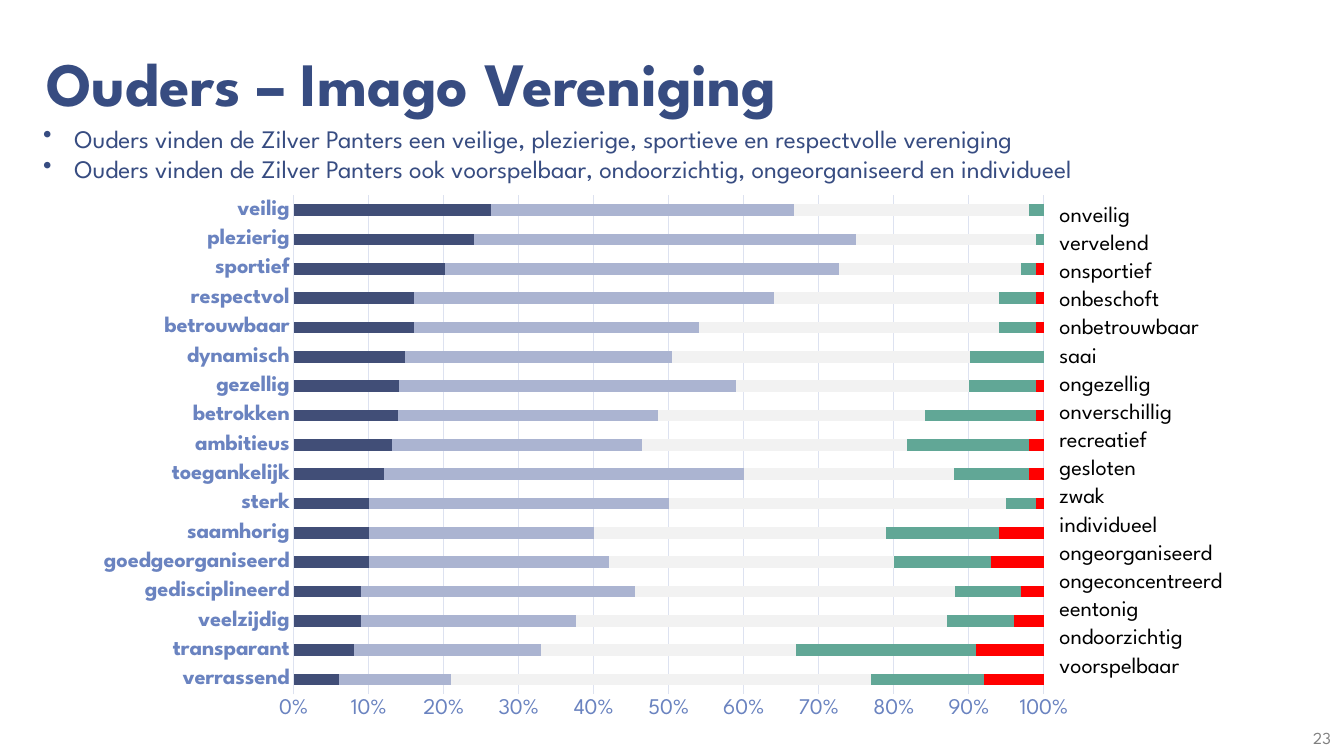
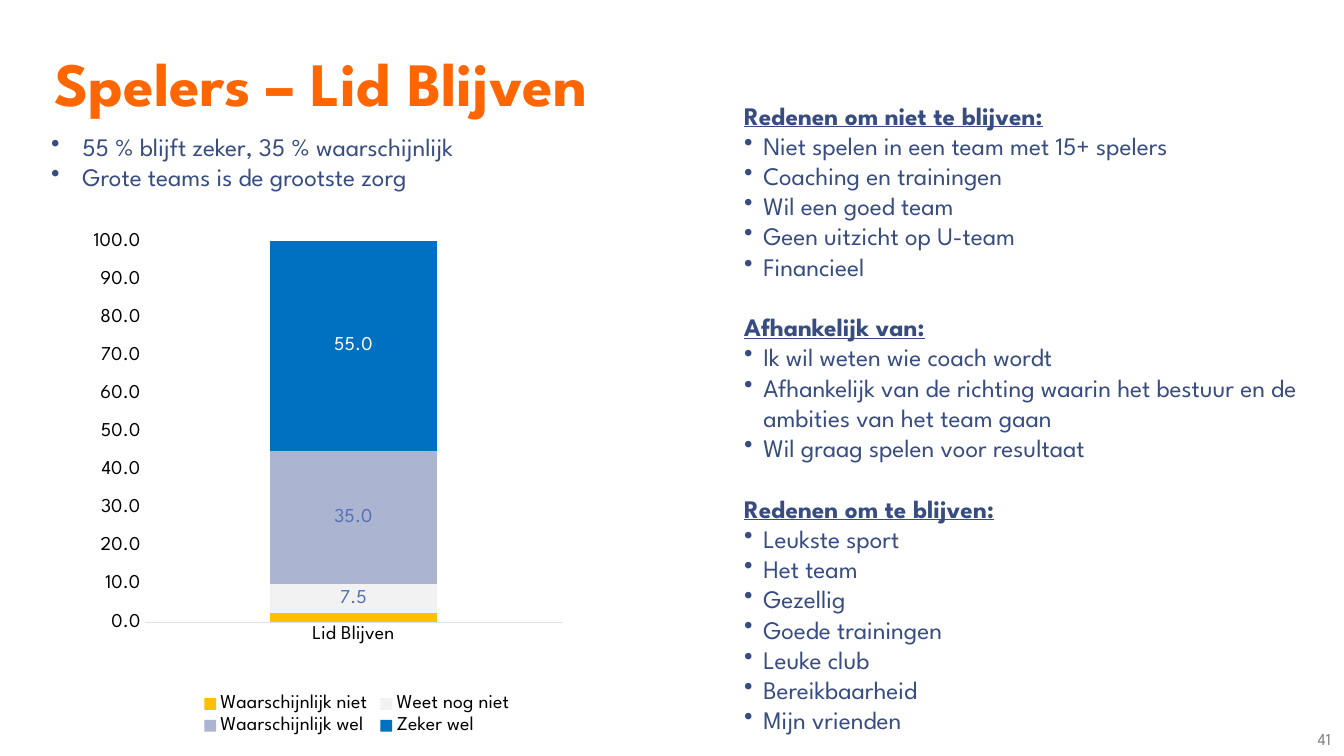
from pptx import Presentation
from pptx.chart.data import CategoryChartData as Data
from pptx.dml.color import RGBColor as RGB
from pptx.enum.chart import XL_CHART_TYPE as Kind, XL_LEGEND_POSITION as Spot, XL_TICK_MARK as Tick
from pptx.enum.text import MSO_ANCHOR as Anchor, PP_ALIGN as Align
from pptx.oxml import parse_xml
from pptx.oxml.ns import nsdecls, qn
from pptx.util import Inches, Pt
from lxml import etree

FACE = "League Spartan"
HUE = {
    "navy": "374C81", "orange": "FF6600", "grey": "808080", "black": "000000",
    "axis": "6A83C0", "grid": "DDE2F0", "label": "546FB6", "white": "FFFFFF",
    "dark": "414E77", "soft": "ABB4D1", "pale": "F2F2F2", "green": "61A796",
    "red": "FF0000", "gold": "FFC000", "blue": "0070C0",
}


def style(font, size, hue, bold=False):
    font.name, font.size, font.bold = FACE, Pt(size), bold
    font.color.rgb = RGB.from_string(HUE[hue])


def write(slide, spot, lines, size, hue, bold=False, dent=0, pad=0.1, space=None,
          anchor=Anchor.TOP, align=Align.LEFT):
    frame = slide.shapes.add_textbox(*map(Inches, spot)).text_frame
    frame.word_wrap, frame.vertical_anchor = True, anchor
    frame.margin_left = frame.margin_right = Inches(pad)
    frame.margin_top = frame.margin_bottom = Inches(0.07 if pad > 0.1 else 0.05)
    for i, line in enumerate(lines):
        para = frame.paragraphs[0] if i == 0 else frame.add_paragraph()
        para.text, para.alignment = line, align
        if space:
            para.line_spacing = space
        head = dent and line.endswith(":")
        if dent and not head:
            props = para._p.get_or_add_pPr()
            props.set("marL", str(Inches(dent)))
            props.set("indent", str(-Inches(dent)))
            etree.SubElement(props, qn("a:buChar")).set("char", "•")
        style(para.font, size, hue, bold or bool(head))
        if head:
            para.font.underline = True
            if i:
                para.space_before = Pt(21.6)


traits = [
    ("verrassend", 6, 15, 56, 15, 8),
    ("transparant", 8, 25, 34, 24, 9),
    ("veelzijdig", 9, 29, 50, 9, 4),
    ("gedisciplineerd", 9, 37, 43, 9, 3),
    ("goedgeorganiseerd", 10, 32, 38, 13, 7),
    ("saamhorig", 10, 30, 39, 15, 6),
    ("sterk", 10, 40, 45, 4, 1),
    ("toegankelijk", 12, 48, 28, 10, 2),
    ("ambitieus", 13, 33, 35, 16, 2),
    ("betrokken", 14, 35, 36, 15, 1),
    ("gezellig", 14, 45, 31, 9, 1),
    ("dynamisch", 15, 36, 40, 10, 0),
    ("betrouwbaar", 16, 38, 40, 5, 1),
    ("respectvol", 16, 48, 30, 5, 1),
    ("sportief", 20, 52, 24, 2, 1),
    ("plezierig", 24, 51, 24, 1, 0),
    ("veilig", 26, 40, 31, 2, 0),
]
names, *scores = zip(*traits)
shades = ["dark", "soft", "pale", "green", "red"]

pages = [
    {
        "title": "Ouders – Imago Vereniging", "hue": "navy", "page": "23",
        "left": 0.33, "top": 1.17, "foot": 7.14,
        "intro": [
            "Ouders vinden de Zilver Panters een veilige, plezierige, sportieve en respectvolle vereniging",
            "Ouders vinden de Zilver Panters ook voorspelbaar, ondoorzichtig, ongeorganiseerd en individueel",
        ],
        "kind": Kind.BAR_STACKED_100, "spot": (0.83, 1.83, 9.92, 5.44),
        "plot": (0.21, 0.02, 0.75, 0.91), "size": 16, "ink": "axis",
        "format": "0%", "grid": True, "cats": names,
        "rows": [(f"Series {i}", vals, hue, None)
                 for i, (vals, hue) in enumerate(zip(scores, shades), 1)],
    },
    {
        "title": "Spelers – Lid Blijven", "hue": "orange", "page": "41",
        "left": 0.41, "top": 1.25, "foot": 7.15,
        "intro": ["55 % blijft zeker, 35 % waarschijnlijk", "Grote teams is de grootste zorg"],
        "kind": Kind.COLUMN_STACKED, "spot": (0.25, 2.08, 6.58, 5.25),
        "plot": (0.18, 0.06, 0.63, 0.72), "size": 14, "ink": "black",
        "format": "###0.0", "grid": False, "cats": ["Lid Blijven"],
        "rows": [
            ("Waarschijnlijk niet", [2.5], "gold", None),
            ("Weet nog niet", [7.5], "pale", "label"),
            ("Waarschijnlijk wel", [35], "soft", "label"),
            ("Zeker wel", [55], "blue", "white"),
        ],
    },
]

deck = Presentation()
deck.slide_width, deck.slide_height = Inches(13.33), Inches(7.5)

for page in pages:
    slide = deck.slides.add_slide(deck.slide_layouts[6])
    left, size, ink = page["left"], page["size"], page["ink"]
    write(slide, (left, 0.08, 12.67, 1.17), [page["title"]], 44, page["hue"], bold=True,
          pad=0.13, space=0.85, anchor=Anchor.BOTTOM)
    write(slide, (12.12, page["foot"], 1.21, 0.35), [page["page"]], 12, "grey",
          pad=0.13, anchor=Anchor.BOTTOM, align=Align.RIGHT)

    data = Data()
    data.categories = page["cats"]
    for name, vals, *rest in page["rows"]:
        data.add_series(name, vals)
    chart = slide.shapes.add_chart(page["kind"], *map(Inches, page["spot"]), data).chart
    style(chart.font, size, "navy")
    chart.has_title = False
    chart.has_legend = not page["grid"]
    if chart.has_legend:
        chart.legend.position = Spot.BOTTOM
        chart.legend.include_in_layout = False
        style(chart.legend.font, size, ink)

    plot = chart.plots[0]
    plot.gap_width, plot.overlap, plot.vary_by_categories = 150, 100, False
    for row, (name, vals, hue, tone) in zip(plot.series, page["rows"]):
        row.format.fill.solid()
        row.format.fill.fore_color.rgb = RGB.from_string(HUE[hue])
        if tone:
            marks = row.data_labels
            marks.show_value = True
            marks.number_format, marks.number_format_is_linked = page["format"], False
            style(marks.font, size, tone)

    cat, val = chart.category_axis, chart.value_axis
    for axis in (cat, val):
        axis.major_tick_mark = axis.minor_tick_mark = Tick.NONE
        axis.has_major_gridlines = False
        style(axis.tick_labels.font, size, ink, axis is cat and page["grid"])
    cat.format.line.color.rgb = RGB.from_string(HUE["grid"])
    cat.format.line.width = Pt(0.75)
    val.format.line.fill.background()
    val.tick_labels.number_format = page["format"]
    val.tick_labels.number_format_is_linked = False
    if page["grid"]:
        val.has_major_gridlines = True
        rule = val.major_gridlines.format.line
        rule.color.rgb, rule.width = RGB.from_string(HUE["grid"]), Pt(0.75)
    else:
        val.minimum_scale, val.maximum_scale, val.major_unit = 0, 100, 10

    area = chart._chartSpace.find(".//" + qn("c:plotArea"))
    for old in area.findall(qn("c:layout")):
        area.remove(old)
    parts = '<c:layoutTarget val="inner"/><c:xMode val="edge"/><c:yMode val="edge"/>'
    parts += "".join(f'<c:{key} val="{num}"/>' for key, num in zip("xywh", page["plot"]))
    area.insert(0, parse_xml(
        f'<c:layout {nsdecls("c")}><c:manualLayout>{parts}</c:manualLayout></c:layout>'))

    write(slide, (left, page["top"], 12.67, 0.71), page["intro"], 18, "navy", dent=0.31)

first, last = deck.slides
write(first, (10.41, 1.92, 2.66, 4.91), [
    "onveilig", "vervelend", "onsportief", "onbeschoft", "onbetrouwbaar", "saai",
    "ongezellig", "onverschillig", "recreatief", "gesloten", "zwak", "individueel",
    "ongeorganiseerd", "ongeconcentreerd", "eentonig", "ondoorzichtig", "voorspelbaar",
], 16, "black", space=1.05)
write(last, (7.25, 0.92, 6.08, 6.42), [
    "Redenen om niet te blijven:",
    "Niet spelen in een team met 15+ spelers",
    "Coaching en trainingen",
    "Wil een goed team",
    "Geen uitzicht op U-team",
    "Financieel",
    "Afhankelijk van:",
    "Ik wil weten wie coach wordt",
    "Afhankelijk van de richting waarin het bestuur en de ambities van het team gaan",
    "Wil graag spelen voor resultaat",
    "Redenen om te blijven:",
    "Leukste sport",
    "Het team",
    "Gezellig",
    "Goede trainingen",
    "Leuke club",
    "Bereikbaarheid",
    "Mijn vrienden",
], 18, "navy", dent=0.19, pad=0.13)

deck.save("out.pptx")
